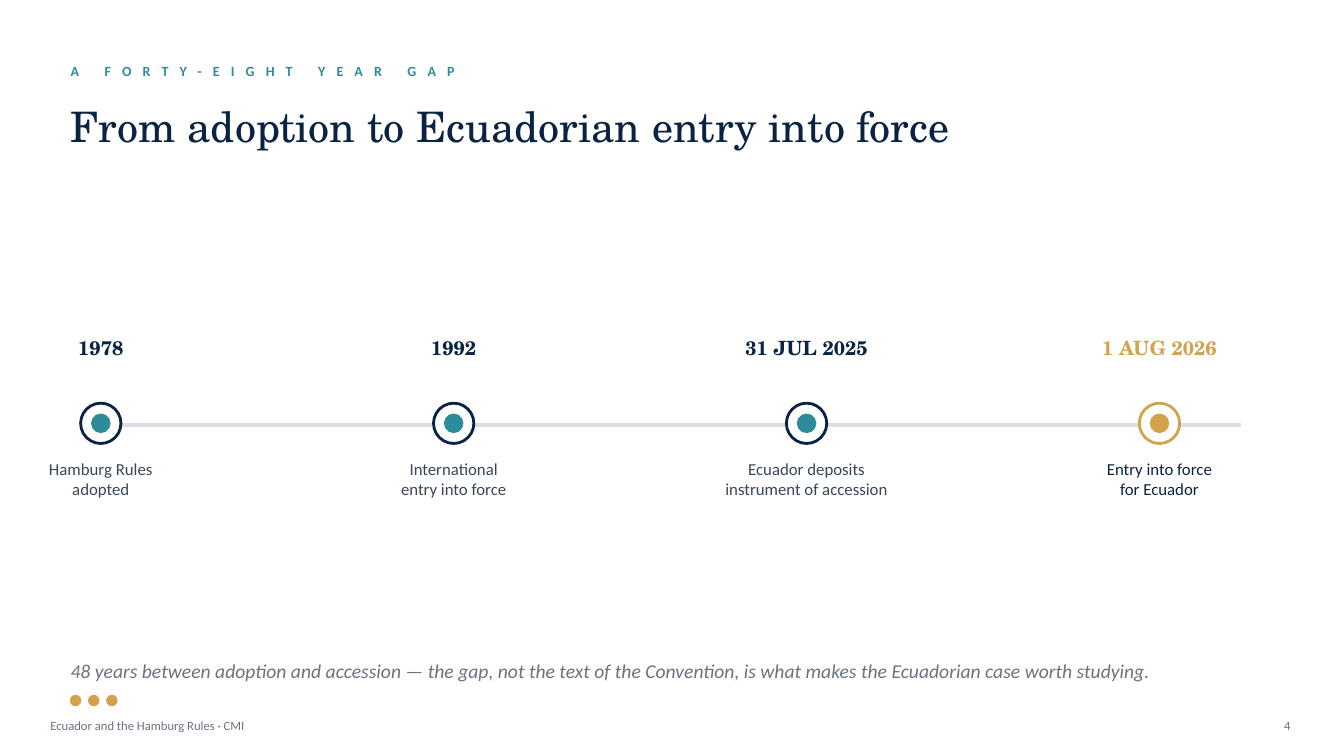
from pptx import Presentation
from pptx import util as u
from pptx.dml.color import RGBColor
from pptx.enum import shapes, text

PX = 9144
NAVY, TEAL, GOLD = "0A2342", "2C8C99", "D4A24C"
SLATE, GREY, RULE, WHITE = "3A4654", "6B7280", "D9DEE4", "FFFFFF"
SERIF, SANS = "TeX Gyre Schola", "Calibri"
LEFT, CENTER, RIGHT = text.PP_ALIGN.LEFT, text.PP_ALIGN.CENTER, text.PP_ALIGN.RIGHT
MIDDLE, TOP = text.MSO_ANCHOR.MIDDLE, text.MSO_ANCHOR.TOP
OVAL, RECT = shapes.MSO_SHAPE.OVAL, shapes.MSO_SHAPE.RECTANGLE

MILESTONES = [
    ("1978", "Hamburg Rules\nadopted", NAVY, TEAL, SLATE),
    ("1992", "International\nentry into force", NAVY, TEAL, SLATE),
    ("31 JUL 2025", "Ecuador deposits\ninstrument of accession", NAVY, TEAL, SLATE),
    ("1 AUG 2026", "Entry into force\nfor Ecuador", GOLD, GOLD, NAVY),
]


def px(*lengths):
    return [u.Emu(n * PX) for n in lengths]


def rgb(value):
    return RGBColor.from_string(value)


def write(sp, words, size, font, color, align=LEFT, anchor=MIDDLE,
          bold=False, italic=False, spacing=0):
    tf = sp.text_frame
    tf.text = words
    tf.word_wrap = True
    tf.auto_size = text.MSO_AUTO_SIZE.NONE
    tf.vertical_anchor = anchor
    tf.margin_left = tf.margin_top = tf.margin_right = tf.margin_bottom = 0
    for p in tf.paragraphs:
        p.alignment = align
        for r in p.runs:
            r.font.size = u.Pt(size)
            r.font.name = font
            r.font.bold = bold
            r.font.italic = italic
            r.font.color.rgb = rgb(color)
            if spacing:
                r.font._element.set("spc", str(spacing * 100))


def add_text(s, box, words, size, font, color, **style):
    write(s.shapes.add_textbox(*px(*box)), words, size, font, color, **style)


def add_shape(s, kind, box, fill, line, width=1):
    sp = s.shapes.add_shape(kind, *px(*box))
    sp.shadow.inherit = False
    sp.fill.solid()
    sp.fill.fore_color.rgb = rgb(fill)
    sp.line.color.rgb = rgb(line)
    sp.line.width = u.Pt(width)


def add_disc(s, cx, cy, size, fill, line, width=1):
    add_shape(s, OVAL, (cx - size // 2, cy - size // 2, size, size), fill, line, width)


def header(s, x, y, w):
    add_text(s, (x, y, 800, 30), "A FORTY-EIGHT YEAR GAP", 10, SANS, TEAL,
             bold=True, spacing=8)
    title = s.shapes.title
    title.left, title.top, title.width, title.height = px(x, y + 35, w, 70)
    write(title, "From adoption to Ecuadorian entry into force", 30, SERIF, NAVY)


def milestone(s, cx, cy, date, label, accent, dot, label_color):
    w = 280
    add_disc(s, cx, cy, 40, WHITE, accent, 2)
    add_disc(s, cx, cy, 18, dot, dot)
    add_text(s, (cx - w // 2, cy - 95, w, 40), date, 14, SERIF, accent,
             align=CENTER, bold=True)
    add_text(s, (cx - w // 2, cy + 35, w, 100), label, 12, SANS, label_color,
             align=CENTER, anchor=TOP)


def timeline(s, x, cy, w, step):
    add_shape(s, RECT, (x, cy, w, 3), RULE, RULE)
    for i, entry in enumerate(MILESTONES):
        milestone(s, x + i * step, cy, *entry)


def takeaway(s, x, y, w):
    add_text(s, (x, y, w, 50),
             "48 years between adoption and accession — the gap, not the text of the "
             "Convention, is what makes the Ecuadorian case worth studying.",
             14, SANS, GREY, italic=True)
    for i in range(3):
        add_disc(s, x + 5 + i * 18, y + 55, 10, GOLD, GOLD)


def footer(s, x, y, w):
    add_text(s, (x, y, 800, 30), "Ecuador and the Hamburg Rules · CMI", 9, SANS, GREY)
    add_text(s, (x + w - 50, y, 50, 30), "4", 9, SANS, GREY, align=RIGHT)


def main():
    prs = Presentation()
    prs.slide_width, prs.slide_height = px(1333, 750)
    s = prs.slides.add_slide(prs.slide_layouts[5])
    s.background.fill.solid()
    s.background.fill.fore_color.rgb = rgb(WHITE)
    header(s, 70, 55, 1200)
    timeline(s, 100, 420, 1130, 350)
    takeaway(s, 70, 640, 1200)
    footer(s, 50, 705, 1230)
    prs.save("out.pptx")


if __name__ == "__main__":
    main()
